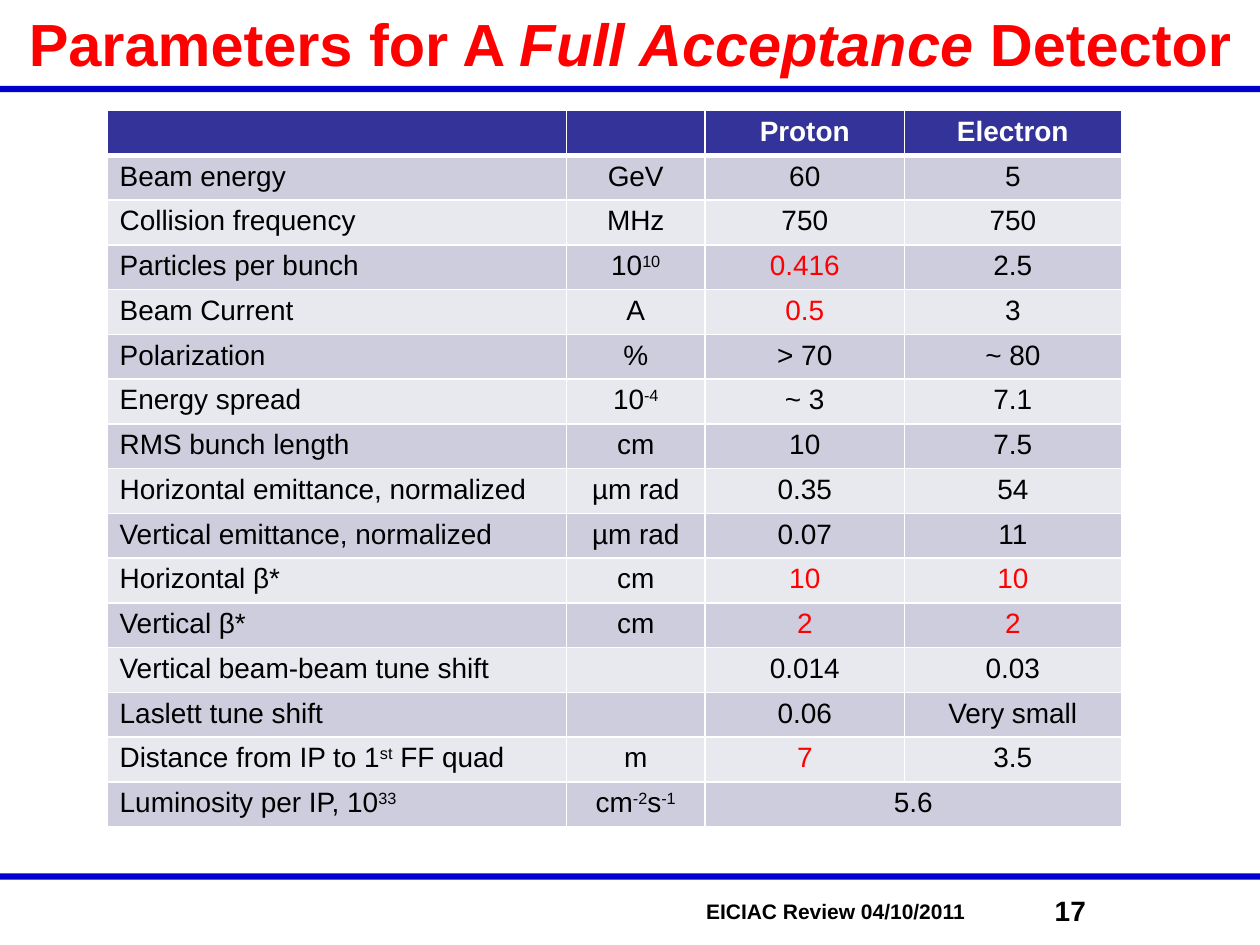
from lxml.etree import SubElement as Sub
from pptx import Presentation
from pptx.dml.color import RGBColor as RGB
from pptx.enum.shapes import MSO_SHAPE as Shape
from pptx.enum.text import MSO_ANCHOR as Anchor, PP_ALIGN as Align
from pptx.oxml.ns import qn
from pptx.util import Pt

RED = RGB(255, 0, 0)
BLUE = RGB(0, 0, 0xCC)
NAVY = RGB(0x33, 0x33, 0x99)
BLACK = RGB(0, 0, 0)
WHITE = RGB(255, 255, 255)
BANDS = RGB(0xE8, 0xE8, 0xEF), RGB(0xCD, 0xCD, 0xDE)

COLS = 262.4, 79.4, 113.8, 124
ROW_H = 24.94

# ^ opens and closes a superscript; a leading ! marks a red value
ROWS = [
    ("", "", "Proton", "Electron"),
    ("Beam energy", "GeV", "60", "5"),
    ("Collision frequency", "MHz", "750", "750"),
    ("Particles per bunch", "10^10", "!0.416", "2.5"),
    ("Beam Current", "A", "!0.5", "3"),
    ("Polarization", "%", "> 70", "~ 80"),
    ("Energy spread", "10^-4", "~ 3", "7.1"),
    ("RMS bunch length", "cm", "10", "7.5"),
    ("Horizontal emittance, normalized", "µm rad", "0.35", "54"),
    ("Vertical emittance, normalized", "µm rad", "0.07", "11"),
    ("Horizontal β*", "cm", "!10", "!10"),
    ("Vertical β*", "cm", "!2", "!2"),
    ("Vertical beam-beam tune shift", "", "0.014", "0.03"),
    ("Laslett tune shift", "", "0.06", "Very small"),
    ("Distance from IP to 1^st^ FF quad", "m", "!7", "3.5"),
    ("Luminosity per IP, 10^33", "cm^-2^s^-1", "5.6", ""),
]


def write(frame, text, size=16, color=BLACK, bold=False, align=Align.CENTER,
          italic=False):
    """Add text to the first paragraph; ^ toggles superscript."""
    para = frame.paragraphs[0]
    para.alignment = align
    for i, part in enumerate(text.split("^")):
        if not part:
            continue
        run = para.add_run()
        run.text = part
        font = run.font
        font.name, font.size = "Arial", Pt(size)
        font.bold, font.italic = bold, italic
        font.color.rgb = color
        if i % 2:
            run._r.get_or_add_rPr().set("baseline", "30000")
    if not text:
        Sub(para._p, qn("a:endParaRPr"), sz=str(size * 100))


def add_rule(slide, top):
    rule = slide.shapes.add_shape(Shape.RECTANGLE, 0, Pt(top), Pt(720), Pt(3.6))
    rule.shadow.inherit = False
    rule.fill.solid()
    rule.fill.fore_color.rgb = BLUE
    rule.line.fill.background()


def add_label(slide, text, left, top, width, height, size):
    box = slide.shapes.add_textbox(Pt(left), Pt(top), Pt(width), Pt(height))
    box.text_frame.word_wrap = True
    write(box.text_frame, text, size=size, bold=True)


def set_edges(cell, top, bottom):
    props = cell._tc.get_or_add_tcPr()
    for side, width in zip("LRTB", (1, 1, top, bottom)):
        line = Sub(props, qn(f"a:ln{side}"), w=str(Pt(width)))
        fill = Sub(line, qn("a:solidFill"))
        Sub(fill, qn("a:srgbClr"), val=str(WHITE))


def fill_cell(cell, text, row, col):
    head = row == 0
    set_edges(cell, 3 if row == 1 else 1, 3 if head else 1)
    cell.fill.solid()
    cell.fill.fore_color.rgb = NAVY if head else BANDS[row % 2]
    cell.margin_top = cell.margin_bottom = Pt(3.2)
    color = WHITE if head else RED if text.startswith("!") else BLACK
    write(cell.text_frame, text.lstrip("!"), color=color, bold=head,
          align=Align.CENTER if col else Align.LEFT)


def add_grid(slide):
    frame = slide.shapes.add_table(
        len(ROWS), len(COLS), Pt(61.2), Pt(63.2),
        Pt(sum(COLS)), Pt(ROW_H * len(ROWS)))
    table = frame.table
    for col, width in zip(table.columns, COLS):
        col.width = Pt(width)
    for r, row in enumerate(ROWS):
        table.rows[r].height = Pt(ROW_H)
        for c, text in enumerate(row):
            fill_cell(table.cell(r, c), text, r, c)
    last = len(ROWS) - 1
    table.cell(last, 2).merge(table.cell(last, 3))


def add_title(slide):
    title = slide.shapes.title
    title.left, title.top, title.width, title.height = 0, 0, Pt(720), Pt(49)
    frame = title.text_frame
    frame.word_wrap = True
    frame.vertical_anchor = Anchor.MIDDLE
    for text, slant in (("Parameters for A ", False),
                        ("Full Acceptance ", True), ("Detector", False)):
        write(frame, text, size=34, color=RED, bold=True, italic=slant)


def main():
    deck = Presentation()
    deck.slide_width, deck.slide_height = Pt(720), Pt(540)
    slide = deck.slides.add_slide(deck.slide_layouts[5])
    for top in (49, 499):
        add_rule(slide, top)
    add_label(slide, "EICIAC Review 04/10/2011", 380, 509.8, 195, 21.6, 12)
    add_label(slide, "17", 579.6, 507, 64, 26.6, 16)
    add_title(slide)
    add_grid(slide)
    deck.save("out.pptx")


if __name__ == "__main__":
    main()
